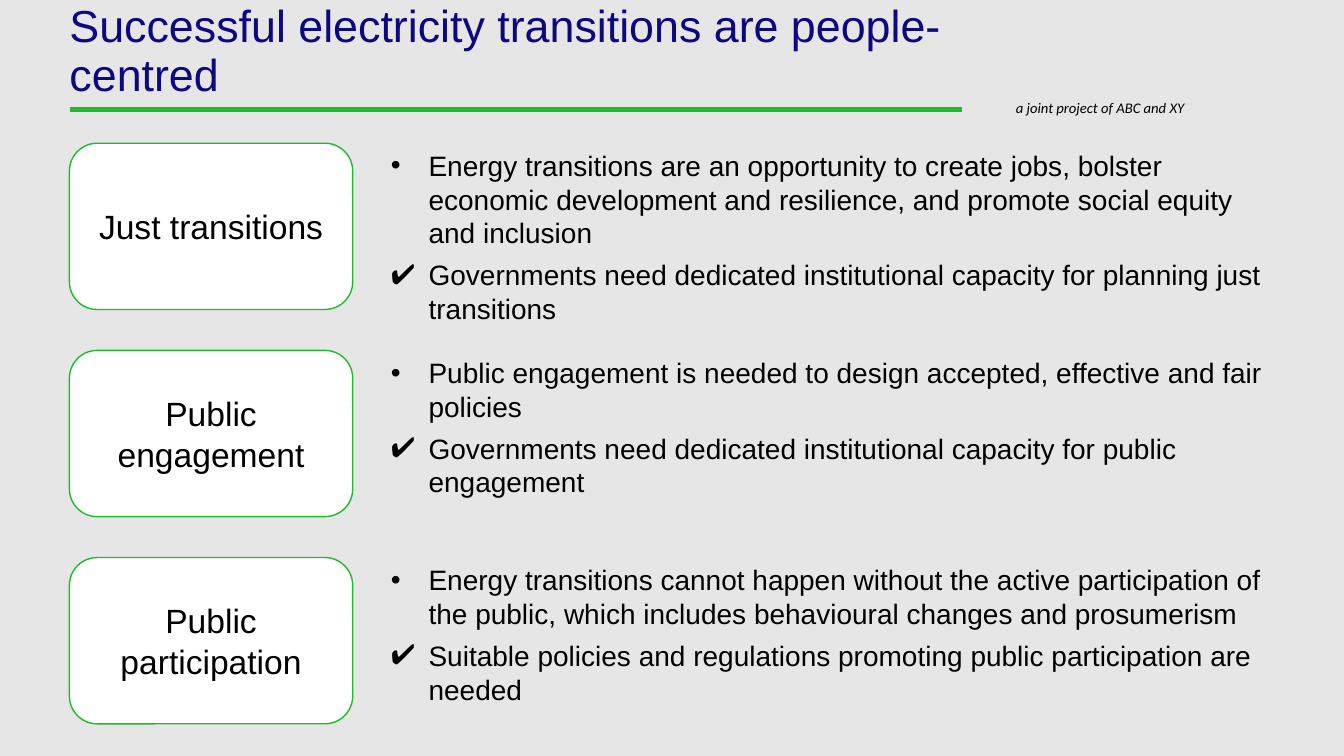
from dataclasses import dataclass

from lxml.etree import SubElement
from pptx import Presentation
from pptx.dml.color import RGBColor
from pptx.enum.shapes import MSO_SHAPE
from pptx.enum.text import MSO_ANCHOR, MSO_AUTO_SIZE, PP_ALIGN
from pptx.oxml.ns import qn
from pptx.shapes.autoshape import Shape
from pptx.slide import Slide
from pptx.text.text import TextFrame
from pptx.util import Cm, Pt


@dataclass(frozen=True)
class Theme:
    background: str = "E7E6E6"
    title: str = "0D0780"
    text: str = "000000"
    panel: str = "FFFFFF"
    outline: str = "1EBC2A"
    rule: str = "1CBC2B"
    font: str = "Arial"
    tagline_font: str = "Calibri"
    title_size: float = 32
    label_size: float = 24
    list_size: float = 20
    tagline_size: float = 10.5


@dataclass(frozen=True)
class Theme_Row:
    label: str
    finding: str
    action: str
    list_height: float


THEME = Theme()
LEFT = 1.75
FIRST_ROW_TOP = 3.61
ROW_PITCH = 5.22
LIST_INDENT = Cm(0.95)
COMPARISON_LAYOUT = 4

ROWS = [
    Theme_Row(
        "Just transitions",
        "Energy transitions are an opportunity to create jobs, bolster economic "
        "development and resilience, and promote social equity and inclusion",
        "Governments need dedicated institutional capacity for planning just transitions",
        4.75,
    ),
    Theme_Row(
        "Public engagement",
        "Public engagement is needed to design accepted, effective and fair policies",
        "Governments need dedicated institutional capacity for public engagement",
        3.89,
    ),
    Theme_Row(
        "Public participation",
        "Energy transitions cannot happen without the active participation of the "
        "public, which includes behavioural changes and prosumerism",
        "Suitable policies and regulations promoting public participation are needed",
        3.89,
    ),
]


def place(shape: Shape, left: float, top: float, width: float, height: float) -> None:
    shape.left, shape.top, shape.width, shape.height = map(Cm, (left, top, width, height))


def prepare_frame(
    frame: TextFrame,
    *,
    anchor: MSO_ANCHOR = MSO_ANCHOR.TOP,
    horizontal: float = 0.25,
    vertical: float = 0.13,
) -> None:
    frame.word_wrap = True
    frame.auto_size = MSO_AUTO_SIZE.NONE
    frame.vertical_anchor = anchor
    frame.margin_left = frame.margin_right = Cm(horizontal)
    frame.margin_top = frame.margin_bottom = Cm(vertical)


def write_text(
    frame: TextFrame,
    text: str,
    *,
    size: float,
    color: str = THEME.text,
    font: str = THEME.font,
    italic: bool = False,
    align: PP_ALIGN = PP_ALIGN.LEFT,
    line_spacing: float = 1.0,
    space_before: float = 0,
    bullet: str = "",
) -> None:
    """Fill the frame's empty first paragraph, or add another one."""
    paragraph = frame.add_paragraph() if frame.text else frame.paragraphs[0]
    paragraph.alignment = align
    paragraph.line_spacing = line_spacing
    paragraph.space_before = Pt(space_before)
    run = paragraph.add_run()
    run.text = text
    run.font.size = Pt(size)
    run.font.name = font
    run.font.bold = False
    run.font.italic = italic
    run.font.color.rgb = RGBColor.from_string(color)
    if bullet:
        properties = paragraph._p.get_or_add_pPr()
        properties.set("marL", str(LIST_INDENT))
        properties.set("indent", str(-LIST_INDENT))
        bullet_color = SubElement(properties, qn("a:buClr"))
        SubElement(bullet_color, qn("a:srgbClr"), val=color)
        SubElement(properties, qn("a:buFont"), typeface=font)
        SubElement(properties, qn("a:buChar"), char=bullet)


def add_panel(
    slide: Slide,
    kind: MSO_SHAPE,
    box: tuple[float, float, float, float],
    *,
    fill: str,
    line: str,
    line_width: float,
) -> Shape:
    shape = slide.shapes.add_shape(kind, *map(Cm, box))
    shape.shadow.inherit = False
    shape.fill.solid()
    shape.fill.fore_color.rgb = RGBColor.from_string(fill)
    shape.line.color.rgb = RGBColor.from_string(line)
    shape.line.width = Pt(line_width)
    return shape


def add_header(slide: Slide) -> None:
    add_panel(slide, MSO_SHAPE.RECTANGLE, (1.78, 2.72, 22.45, 0.1),
              fill=THEME.rule, line=THEME.rule, line_width=0.75)

    tagline = slide.shapes.add_textbox(Cm(25.35), Cm(2.36), Cm(6.17), Cm(0.71))
    prepare_frame(tagline.text_frame)
    write_text(tagline.text_frame, "a joint project of ABC and XY",
               size=THEME.tagline_size, font=THEME.tagline_font, italic=True)

    title = slide.shapes.title
    place(title, LEFT, 0.1, 22.5, 2.46)
    prepare_frame(title.text_frame, horizontal=0, vertical=0)
    write_text(title.text_frame, "Successful electricity transitions are people-centred",
               size=THEME.title_size, color=THEME.title, line_spacing=0.9)


def add_row(slide: Slide, body: Shape, row: Theme_Row, top: float) -> None:
    label = add_panel(slide, MSO_SHAPE.ROUNDED_RECTANGLE, (LEFT, top, 7.14, 4.19),
                      fill=THEME.panel, line=THEME.outline, line_width=1)
    prepare_frame(label.text_frame, anchor=MSO_ANCHOR.MIDDLE)
    write_text(label.text_frame, row.label, size=THEME.label_size, align=PP_ALIGN.CENTER)

    place(body, 9.6, top, 22.5, row.list_height)
    prepare_frame(body.text_frame)
    write_text(body.text_frame, row.finding, size=THEME.list_size, bullet="•")
    write_text(body.text_frame, row.action, size=THEME.list_size, bullet="✔", space_before=6)


def main() -> None:
    presentation = Presentation()
    presentation.slide_width, presentation.slide_height = Cm(33.87), Cm(19.05)
    slide = presentation.slides.add_slide(presentation.slide_layouts[COMPARISON_LAYOUT])
    slide.background.fill.solid()
    slide.background.fill.fore_color.rgb = RGBColor.from_string(THEME.background)

    title, *bodies = slide.placeholders
    add_header(slide)
    for index, (body, row) in enumerate(zip(bodies, ROWS)):
        add_row(slide, body, row, FIRST_ROW_TOP + index * ROW_PITCH)
    for unused in bodies[len(ROWS):]:
        unused.element.getparent().remove(unused.element)

    presentation.save("out.pptx")


if __name__ == "__main__":
    main()
